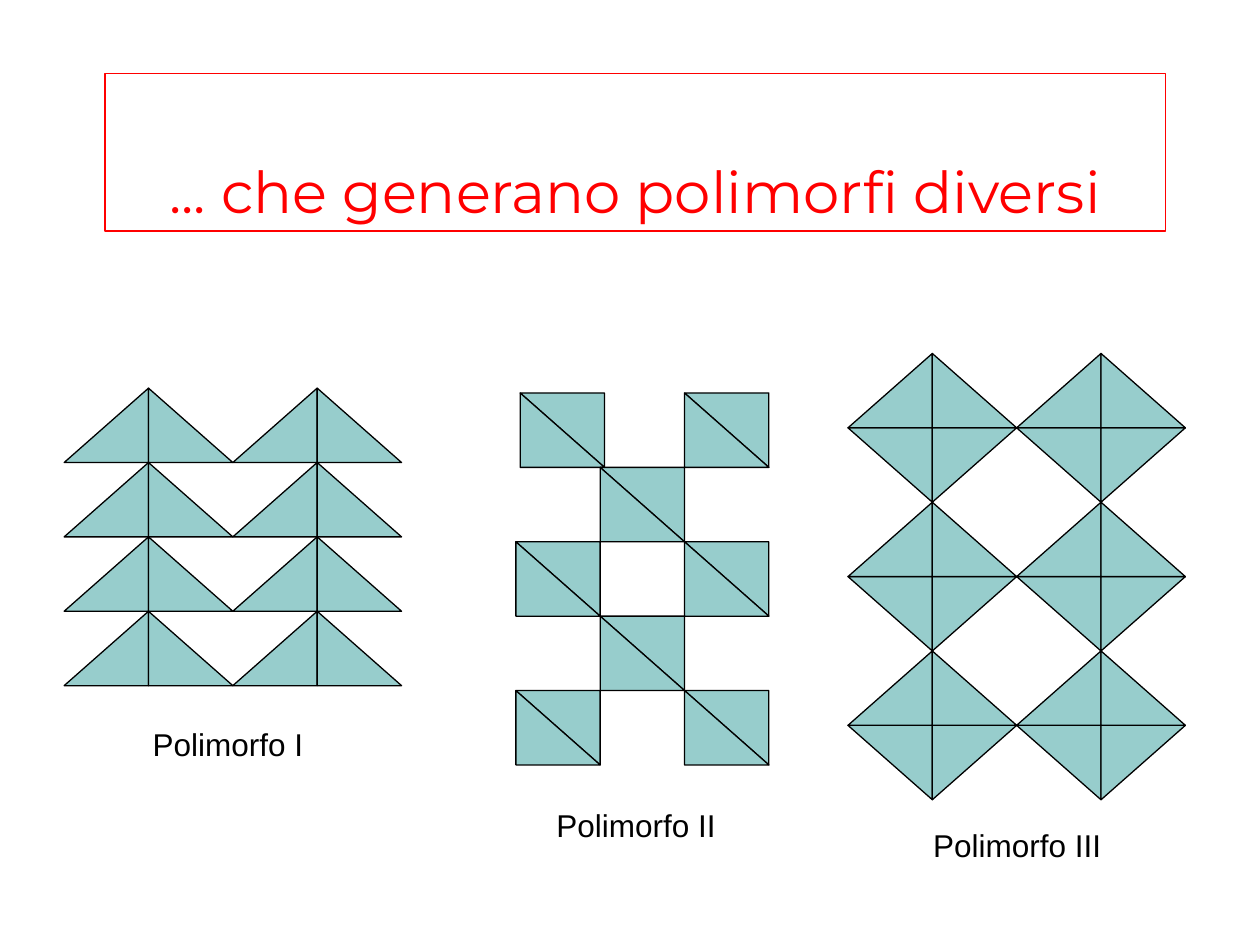
from itertools import product

from pptx import Presentation
from pptx.dml.color import RGBColor
from pptx.enum.shapes import MSO_SHAPE
from pptx.enum.text import MSO_ANCHOR, MSO_AUTO_SIZE, PP_ALIGN
from pptx.util import Pt

TRIANGLE = MSO_SHAPE.RIGHT_TRIANGLE
BOTTOM = MSO_ANCHOR.BOTTOM
CENTER = PP_ALIGN.CENTER
GROW = MSO_AUTO_SIZE.SHAPE_TO_FIT_TEXT

WIDE, HIGH = 48.2, 42.5
PEAK = [(0, 0, "h"), (1, 0, "")]
BLOCK = [(0, 0, "hv"), (0, 0, "")]
DIAMOND = [(0, 1, "hv"), (1, 1, "v")] + PEAK


def color(code):
    return RGBColor.from_string(code)


class Board:
    red, black, teal = "FF0000", "000000", "97CDCC"
    edge = 0.75

    def __init__(self, slide):
        self.slide = slide

    def outline(self, shape, code):
        shape.line.color.rgb = color(code)
        shape.line.width = Pt(self.edge)

    def text(self, box, words, font, size, code):
        shape = self.slide.shapes.add_textbox(*map(Pt, box))
        shape.text_frame.word_wrap = True
        para = shape.text_frame.paragraphs[0]
        para.text = words
        para.alignment = CENTER
        para.font.name = font
        para.font.size = Pt(size)
        para.font.color.rgb = color(code)
        return shape

    def title(self, box, words):
        shape = self.text(box, words, "Montserrat", 33, self.red)
        shape.text_frame.vertical_anchor = BOTTOM
        self.outline(shape, self.red)

    def label(self, left, top, width, words):
        shape = self.text((left, top, width, 29), words, "Arial", 18, self.black)
        shape.text_frame.auto_size = GROW

    def tile(self, left, top, parts):
        group = self.slide.shapes.add_group_shape()
        for col, row, flip in parts:
            box = (left + col * WIDE, top + row * HIGH, WIDE, HIGH)
            shape = group.shapes.add_shape(TRIANGLE, *map(Pt, box))
            shape.shadow.inherit = False
            shape.fill.solid()
            shape.fill.fore_color.rgb = color(self.teal)
            self.outline(shape, self.black)
            frame = shape._element.spPr.get_or_add_xfrm()
            for axis in flip:
                frame.set("flip" + axis.upper(), "1")


def main():
    deck = Presentation()
    deck.slide_width, deck.slide_height = Pt(720), Pt(540)
    board = Board(deck.slides.add_slide(deck.slide_layouts[6]))

    board.title((60, 42, 606, 90), "... che generano polimorfi diversi")

    for col, row in product(range(2), range(4)):
        board.tile(36.7 + col * 2 * WIDE, 221.8 + row * HIGH, PEAK)

    for row in range(5):
        for col in ([1] if row % 2 else [0, 2]):
            shift = 2.5 if row == col == 0 else 0
            board.tile(294.8 + col * WIDE + shift, 224.6 + row * HIGH, BLOCK)

    for row, col in product(range(3), range(2)):
        board.tile(484.6 + col * 2 * WIDE, 202 + row * 2 * HIGH, DIAMOND)

    board.label(36.7, 411, 187, "Polimorfo I")
    board.label(270, 457, 187, "Polimorfo II")
    board.label(514.8, 468.7, 133, "Polimorfo III")

    deck.save("out.pptx")


if __name__ == "__main__":
    main()
